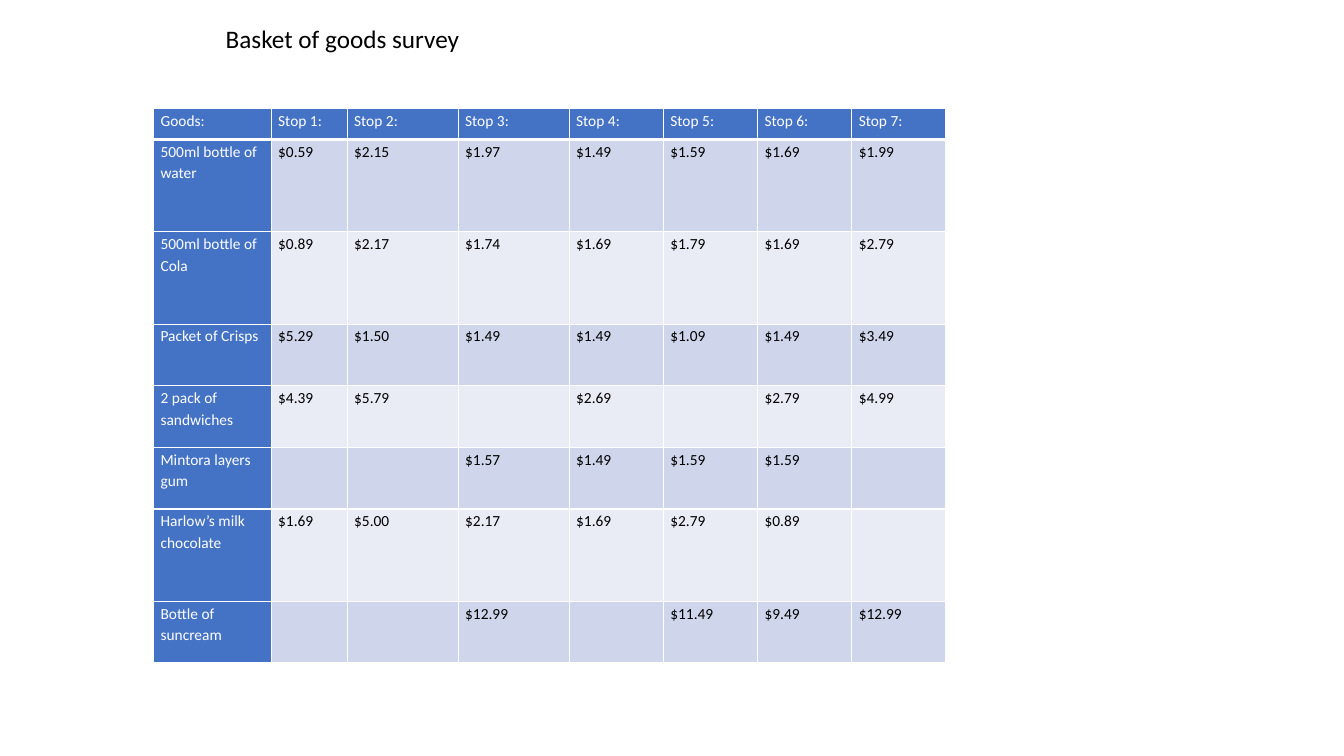
from lxml import etree
from pptx import Presentation
from pptx.dml.color import RGBColor
from pptx.enum.text import MSO_ANCHOR, MSO_AUTO_SIZE, PP_ALIGN
from pptx.oxml.ns import qn
from pptx.util import Pt

TOP = MSO_ANCHOR.TOP
LEFT = PP_ALIGN.LEFT
FIXED = MSO_AUTO_SIZE.NONE
WHITE = RGBColor(0xFF, 0xFF, 0xFF)
BLACK = RGBColor(0, 0, 0)
BLUE = RGBColor(0x44, 0x72, 0xC4)
DARK = RGBColor(0xCF, 0xD5, 0xEA)
PALE = RGBColor(0xE9, 0xEB, 0xF5)

COLS = [84, 54.3] + [79.3] * 2 + [67.3] * 4
LINES = [1, 3, 3, 2, 2, 2, 3, 2]
UNIT = 22
GOODS = [
    ["Goods:"] + [f"Stop {n}:" for n in range(1, 8)],
    ["500ml bottle of water", "$0.59", "$2.15", "$1.97", "$1.49", "$1.59", "$1.69", "$1.99"],
    ["500ml bottle of Cola", "$0.89", "$2.17", "$1.74", "$1.69", "$1.79", "$1.69", "$2.79"],
    ["Packet of Crisps", "$5.29", "$1.50", "$1.49", "$1.49", "$1.09", "$1.49", "$3.49"],
    ["2 pack of sandwiches", "$4.39", "$5.79", "", "$2.69", "", "$2.79", "$4.99"],
    ["Mintora layers gum", "", "", "$1.57", "$1.49", "$1.59", "$1.59", ""],
    ["Harlow’s milk chocolate", "$1.69", "$5.00", "$2.17", "$1.69", "$2.79", "$0.89", ""],
    ["Bottle of suncream", "", "", "$12.99", "", "$11.49", "$9.49", "$12.99"],
]


class Deck:
    """Holds the font and the current slide, and draws its elements."""

    def __init__(self, slide, face):
        self.slide = slide
        self.face = face

    def style(self, para, size, color):
        font = para.font
        font.name = self.face
        font.size = Pt(size)
        font.bold = False
        font.color.rgb = color

    def title(self, text, left, top, width, height):
        shape = self.slide.shapes.title
        shape.left, shape.top = Pt(left), Pt(top)
        shape.width, shape.height = Pt(width), Pt(height)
        frame = shape.text_frame
        frame.text = text
        frame.word_wrap = True
        frame.auto_size = FIXED
        frame.vertical_anchor = TOP
        para = frame.paragraphs[0]
        para.alignment = LEFT
        self.style(para, 18, BLACK)

    def edge(self, cell, side, width):
        props = cell._tc.get_or_add_tcPr()
        line = etree.SubElement(props, qn(f"a:ln{side}"), w=str(Pt(width)))
        fill = etree.SubElement(line, qn("a:solidFill"))
        etree.SubElement(fill, qn("a:srgbClr"), val=str(WHITE))

    def cell(self, cell, text, fill, color, base):
        for side, width in zip("LRTB", (1, 1, 1, base)):
            self.edge(cell, side, width)
        cell.fill.solid()
        cell.fill.fore_color.rgb = fill
        cell.margin_left = cell.margin_right = Pt(5)
        cell.margin_top = cell.margin_bottom = Pt(0)
        cell.text = text
        para = cell.text_frame.paragraphs[0]
        para.line_spacing = 1.15
        self.style(para, 11, color)

    def table(self, data, cols, rows, left, top):
        frame = self.slide.shapes.add_table(
            len(rows), len(cols), Pt(left), Pt(top), Pt(sum(cols)), Pt(sum(rows)))
        table = frame.table
        for col, width in zip(table.columns, cols):
            col.width = Pt(width)
        for row, height in zip(table.rows, rows):
            row.height = Pt(height)
        for r, line in enumerate(data):
            for c, text in enumerate(line):
                head = r == 0 or c == 0
                fill = BLUE if head else DARK if r % 2 else PALE
                color = WHITE if head else BLACK
                self.cell(table.cell(r, c), text, fill, color, 1 if r else 3)


def main():
    prs = Presentation()
    prs.slide_width, prs.slide_height = Pt(960), Pt(540)
    deck = Deck(prs.slides.add_slide(prs.slide_layouts[5]), "Calibri")
    deck.table(GOODS, COLS, [n * UNIT for n in LINES], 109.7, 77.6)
    deck.title("Basket of goods survey", 154, 13, 248.4, 29)
    prs.save("out.pptx")


if __name__ == "__main__":
    main()
